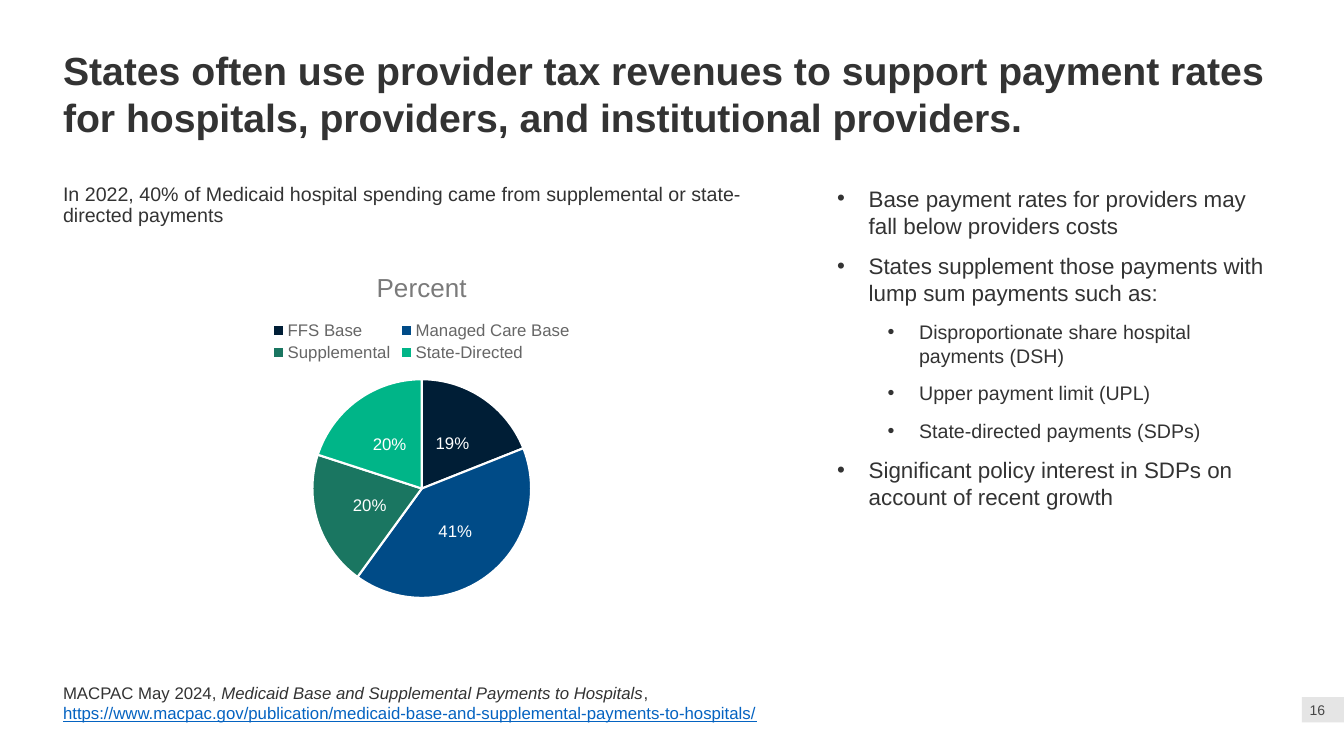
from dataclasses import dataclass

from lxml import etree
from pptx import Presentation
from pptx.chart.data import CategoryChartData
from pptx.dml.color import RGBColor
from pptx.enum.chart import XL_CHART_TYPE, XL_LABEL_POSITION, XL_LEGEND_POSITION
from pptx.enum.shapes import MSO_SHAPE
from pptx.enum.text import MSO_ANCHOR, MSO_AUTO_SIZE, PP_ALIGN
from pptx.oxml.ns import qn
from pptx.util import Pt

PIE = XL_CHART_TYPE.PIE
CENTER = XL_LABEL_POSITION.CENTER
LEGEND_TOP = XL_LEGEND_POSITION.TOP
RECT = MSO_SHAPE.RECTANGLE
TOP, MIDDLE, BOTTOM = MSO_ANCHOR.TOP, MSO_ANCHOR.MIDDLE, MSO_ANCHOR.BOTTOM
NO_FIT = MSO_AUTO_SIZE.NONE
LEFT, RIGHT = PP_ALIGN.LEFT, PP_ALIGN.RIGHT
COMPARISON = 4


@dataclass(frozen=True)
class Theme:
    font: str = "Arial"
    text: str = "333333"
    muted: str = "666666"
    chart_title: str = "7A7A7A"
    number: str = "474747"
    tab: str = "E5E5E5"
    link: str = "0563C1"
    white: str = "FFFFFF"
    slices: tuple = ("001E36", "004B87", "1A7661", "00B588")
    title_size: float = 28
    chart_title_size: float = 18.6
    body_size: float = 16
    sub_size: float = 14
    small_size: float = 12
    number_size: float = 10


THEME = Theme()
MARGIN = 45
BODY_TOP = 132
LEFT_W = 512.5


def style(font, size, color=THEME.text, bold=False, italic=False, underline=False):
    font.name = THEME.font
    font.size = Pt(size)
    font.color.rgb = RGBColor.from_string(color)
    font.bold = bold
    font.italic = italic
    font.underline = underline


def add_run(p, text, **fmt):
    r = p.add_run()
    r.text = text
    style(r.font, **fmt)


def place(sp, box, anchor=TOP):
    sp.left, sp.top, sp.width, sp.height = map(Pt, box)
    tf = sp.text_frame
    tf.margin_left = tf.margin_top = tf.margin_right = tf.margin_bottom = 0
    tf.word_wrap = True
    tf.auto_size = NO_FIT
    tf.vertical_anchor = anchor
    return tf


def space(p, before=0, after=0, line=1.0, align=LEFT):
    p.space_before, p.space_after = Pt(before), Pt(after)
    p.line_spacing = line
    p.alignment = align


def set_indent(p, left, bullet=None):
    pPr = p._p.get_or_add_pPr()
    hang = 22.5 if bullet else 0
    pPr.set("marL", str(Pt(left)))
    pPr.set("indent", str(-Pt(hang)))
    if bullet:
        etree.SubElement(pPr, qn("a:buFont")).set("typeface", THEME.font)
        etree.SubElement(pPr, qn("a:buChar")).set("char", bullet)
    else:
        etree.SubElement(pPr, qn("a:buNone"))


def add_text(sp, box, runs, anchor=TOP, **spacing):
    p = place(sp, box, anchor).paragraphs[0]
    space(p, **spacing)
    set_indent(p, 0)
    for text, fmt in runs:
        add_run(p, text, **fmt)


def add_bullets(sp, box, items):
    tf = place(sp, box)
    for i, (level, text) in enumerate(items):
        p = tf.paragraphs[0] if i == 0 else tf.add_paragraph()
        p.level = level
        space(p, before=10 if i else 0)
        set_indent(p, 22.5 + 36 * level, "•")
        add_run(p, text, size=THEME.sub_size if level else THEME.body_size)


def add_pie(s, box, title, shares):
    data = CategoryChartData(number_format="0%")
    data.categories = list(shares)
    data.add_series(title, list(shares.values()))
    chart = s.shapes.add_chart(PIE, *map(Pt, box), data).chart
    style(chart.font, THEME.number_size)
    chart.has_title = True
    p = chart.chart_title.text_frame.paragraphs[0]
    add_run(p, title, size=THEME.chart_title_size, color=THEME.chart_title)
    chart.has_legend = True
    chart.legend.position = LEGEND_TOP
    chart.legend.include_in_layout = False
    style(chart.legend.font, THEME.small_size, THEME.muted)
    plot = chart.plots[0]
    plot.vary_by_categories = True
    plot.has_data_labels = True
    labels = plot.data_labels
    labels.show_value = True
    labels.show_percentage = False
    labels.number_format = "0%"
    labels.number_format_is_linked = False
    labels.position = CENTER
    style(labels.font, THEME.small_size, THEME.white)
    for i, color in enumerate(THEME.slices):
        fmt = plot.series[0].points[i].format
        fmt.fill.solid()
        fmt.fill.fore_color.rgb = RGBColor.from_string(color)
        fmt.line.color.rgb = RGBColor.from_string(THEME.white)
        fmt.line.width = Pt(1.5)


def add_page_number(s, box, number):
    left, top, width, height = box
    tab = s.shapes.add_shape(RECT, *map(Pt, box))
    tab.shadow.inherit = False
    tab.fill.solid()
    tab.fill.fore_color.rgb = RGBColor.from_string(THEME.tab)
    tab.line.fill.background()
    number_box = (left, top, width - 13.5, height)
    sp = s.shapes.add_textbox(*map(Pt, number_box))
    fmt = dict(size=THEME.number_size, color=THEME.number)
    add_text(sp, number_box, [(number, fmt)], MIDDLE, align=RIGHT)


def build_slide(prs):
    s = prs.slides.add_slide(prs.slide_layouts[COMPARISON])
    title, caption, spare, source, bullets = s.placeholders
    spare.element.getparent().remove(spare.element)

    add_text(title, (MARGIN, 33, 870, 72), [(
        "States often use provider tax revenues to support payment rates "
        "for hospitals, providers, and institutional providers.",
        dict(size=THEME.title_size, bold=True))])
    add_text(caption, (MARGIN, BODY_TOP, LEFT_W, 39), [(
        "In 2022, 40% of Medicaid hospital spending came from supplemental "
        "or state-directed payments", dict(size=THEME.sub_size))], line=0.9)
    add_pie(s, (MARGIN, 180.5, LEFT_W, 256.5), "Percent", {
        "FFS Base": 0.19,
        "Managed Care Base": 0.41,
        "Supplemental": 0.20,
        "State-Directed": 0.20,
    })
    add_bullets(bullets, (598, BODY_TOP, 317, 305), [
        (0, "Base payment rates for providers may fall below providers costs"),
        (0, "States supplement those payments with lump sum payments such as:"),
        (1, "Disproportionate share hospital payments (DSH)"),
        (1, "Upper payment limit (UPL)"),
        (1, "State-directed payments (SDPs)"),
        (0, "Significant policy interest in SDPs on account of recent growth"),
    ])
    small = dict(size=THEME.small_size)
    add_text(source, (MARGIN, 487.5, 657, 29), [
        ("MACPAC May 2024, ", small),
        ("Medicaid Base and Supplemental Payments to Hospitals", dict(small, italic=True)),
        (", ", small),
        ("https://www.macpac.gov/publication/medicaid-base-and-supplemental-payments-to-hospitals/",
         dict(small, color=THEME.link, underline=True)),
    ], BOTTOM, after=2)
    add_page_number(s, (930, 498, 30, 18), "16")


def main():
    prs = Presentation()
    prs.slide_width, prs.slide_height = Pt(960), Pt(540)
    build_slide(prs)
    prs.save("out.pptx")


if __name__ == "__main__":
    main()
